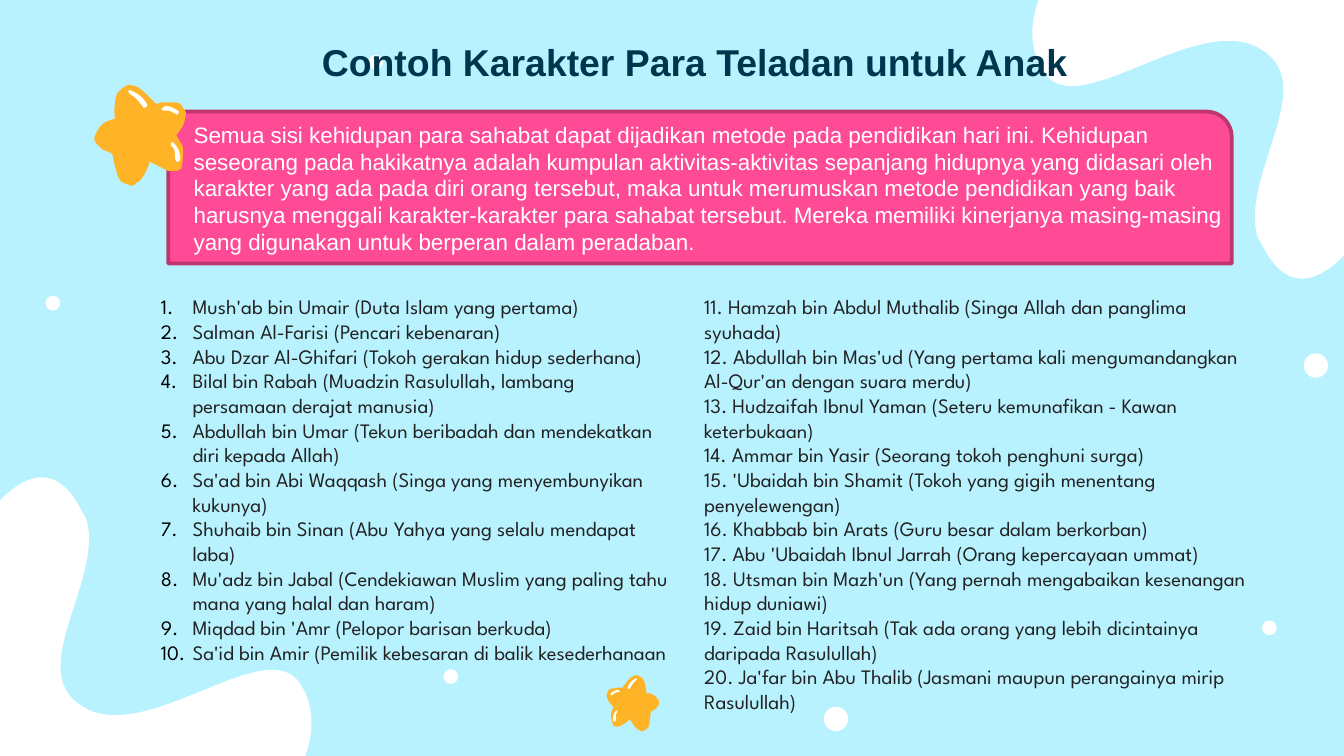
import math
from dataclasses import dataclass

from lxml import etree
from pptx import Presentation
from pptx import util as u
from pptx.dml.color import RGBColor
from pptx.enum import shapes, text
from pptx.oxml import ns


@dataclass(frozen=True)
class Theme:
    sky: str = "B8F2FF"
    white: str = "FFFFFF"
    pink: str = "FF4A95"
    pink_edge: str = "BD376E"
    star: str = "FFB428"
    navy: str = "00354E"
    ink: str = "222222"
    black: str = "000000"
    heading_font: str = "Arial"
    list_font: str = "League Spartan"
    title_size: int = 20
    intro_size: int = 12
    list_size: int = 11


THEME = Theme()
WIDTH, HEIGHT = 25.4, 14.29
UNIT = 0.0254

TITLE = "Contoh Karakter Para Teladan untuk Anak"
INTRO = (
    "Semua sisi kehidupan para sahabat dapat dijadikan metode pada pendidikan hari ini. "
    "Kehidupan seseorang pada hakikatnya adalah kumpulan aktivitas-aktivitas sepanjang "
    "hidupnya yang didasari oleh karakter yang ada pada diri orang tersebut, maka untuk "
    "merumuskan metode pendidikan yang baik harusnya menggali karakter-karakter para "
    "sahabat tersebut. Mereka memiliki kinerjanya masing-masing yang digunakan untuk "
    "berperan dalam peradaban."
)
FIRST_TEN = [
    "Mush'ab bin Umair (Duta Islam yang pertama)",
    "Salman Al-Farisi (Pencari kebenaran)",
    "Abu Dzar Al-Ghifari (Tokoh gerakan hidup sederhana)",
    "Bilal bin Rabah (Muadzin Rasulullah, lambang persamaan derajat manusia)",
    "Abdullah bin Umar (Tekun beribadah dan mendekatkan diri kepada Allah)",
    "Sa'ad bin Abi Waqqash (Singa yang menyembunyikan kukunya)",
    "Shuhaib bin Sinan (Abu Yahya yang selalu mendapat laba)",
    "Mu'adz bin Jabal (Cendekiawan Muslim yang paling tahu mana yang halal dan haram)",
    "Miqdad bin 'Amr (Pelopor barisan berkuda)",
    "Sa'id bin Amir (Pemilik kebesaran di balik kesederhanaan",
]
SECOND_TEN = [
    "11. Hamzah bin Abdul Muthalib (Singa Allah dan panglima syuhada)",
    "12. Abdullah bin Mas'ud (Yang pertama kali mengumandangkan Al-Qur'an dengan suara merdu)",
    "13. Hudzaifah Ibnul Yaman (Seteru kemunafikan - Kawan keterbukaan)",
    "14. Ammar bin Yasir (Seorang tokoh penghuni surga)",
    "15. 'Ubaidah bin Shamit (Tokoh yang gigih menentang penyelewengan)",
    "16. Khabbab bin Arats (Guru besar dalam berkorban)",
    "17. Abu 'Ubaidah Ibnul Jarrah (Orang kepercayaan ummat)",
    "18. Utsman bin Mazh'un (Yang pernah mengabaikan kesenangan hidup duniawi)",
    "19. Zaid bin Haritsah (Tak ada orang yang lebih dicintainya daripada Rasulullah)",
    "20. Ja'far bin Abu Thalib (Jasmani maupun perangainya mirip Rasulullah)",
]
DOTS = [(24.64, 6.68, 0.46), (23.85, 11.73, 0.28), (6.96, 1.04, 0.28),
        (0.86, 5.59, 0.28), (8.38, 12.65, 0.28), (15.57, 13.36, 0.46)]

BLOB_PIVOT = (500, 281.25)
BLOB = [
    (1091, -162),
    (1120, -79), (1100, 26), (1057, 104), (1038, 136), (978, 260), (939, 182),
    (938, 180), (937, 179), (936, 177), (924, 140), (964, 86), (953, 54),
    (950, 45), (943, 38), (931, 33), (881, 15), (797, 94), (775, 51),
    (773, 48), (772, 45), (771, 42), (756, -3), (806, -38), (792, -80),
    (789, -89), (783, -99), (773, -108), (746, -135), (693, -140), (685, -166),
    (680, -179), (687, -197), (714, -225), (766, -282), (887, -306), (958, -286),
    (1030, -265), (1072, -219), (1091, -162),
]
STAR_PIVOT = (104.5, 100.5)
STAR_BODY = [
    (96, 63), (103, 65), (113, 74), (116, 77), (120, 76), (125, 76), (131, 76), (134, 77),
    (136, 80), (138, 83), (138, 86), (136, 93), (132, 99), (131, 100), (133, 104), (136, 110),
    (135, 124), (133, 126), (131, 127), (129, 127), (126, 127), (123, 126), (111, 120),
    (111, 121), (108, 128), (104, 134), (101, 136), (100, 137), (98, 138), (95, 137),
    (92, 136), (88, 132), (84, 118), (83, 114), (76, 111), (74, 109), (72, 107), (70, 102),
    (76, 92), (85, 88), (85, 87), (85, 79), (86, 72), (87, 69), (89, 67), (90, 66), (93, 64),
    (95, 63),
]
STAR_GLINTS = [
    [(96, 67), (97, 67), (104, 71), (109, 77), (109, 79), (107, 80), (106, 79), (101, 73),
     (97, 70), (96, 69), (95, 68)],
    [(122, 79), (126, 79), (132, 82), (133, 83), (132, 85), (131, 85), (130, 84), (129, 84),
     (128, 83), (125, 82), (124, 82), (122, 82), (121, 82), (120, 81), (121, 80)],
    [(128, 106), (129, 106), (133, 112), (134, 118), (133, 120), (131, 120), (130, 117),
     (130, 115), (130, 113), (129, 110), (127, 108), (127, 106)],
]


def rgb(code):
    return RGBColor.from_string(code)


def paint(shape, fill, edge=None):
    shape.shadow.inherit = False
    shape.fill.solid()
    shape.fill.fore_color.rgb = rgb(fill)
    if edge:
        shape.line.color.rgb = rgb(edge)
        shape.line.width = u.Pt(2)
    else:
        shape.line.fill.background()


def smooth_loop(anchors):
    count = len(anchors)
    points = [anchors[0]]
    for index in range(count):
        before, here, after, beyond = (anchors[(index + k) % count] for k in (-1, 0, 1, 2))
        leave = tuple(h + (a - b) / 6 for b, h, a in zip(before, here, after))
        arrive = tuple(a - (y - h) / 6 for h, a, y in zip(here, after, beyond))
        points += [leave, arrive, after]
    return points


def bend(shape):
    segments = list(shape._element.iter(ns.qn("a:lnTo")))
    for first, second, end in zip(*[iter(segments)] * 3):
        curve = etree.Element(ns.qn("a:cubicBezTo"))
        first.addprevious(curve)
        for segment in (first, second, end):
            curve.append(segment[0])
            segment.getparent().remove(segment)


def add_outline(slide, points, fill, pivot, centre, scale=1, tilt=0, flip=1):
    cos, sin = math.cos(math.radians(tilt)), math.sin(math.radians(tilt))
    placed = []
    for x, y in points:
        dx, dy = (x - pivot[0]) * flip * scale * UNIT, (y - pivot[1]) * scale * UNIT
        placed.append((u.Cm(centre[0] + dx * cos - dy * sin),
                       u.Cm(centre[1] + dx * sin + dy * cos)))
    builder = slide.shapes.build_freeform(*placed[0])
    builder.add_line_segments(placed[1:], close=True)
    shape = builder.convert_to_shape()
    bend(shape)
    paint(shape, fill)


def add_backdrop(slide):
    slide.background.fill.solid()
    slide.background.fill.fore_color.rgb = rgb(THEME.sky)
    for left, top, size in DOTS:
        dot = slide.shapes.add_shape(shapes.MSO_SHAPE.OVAL, *map(u.Cm, (left, top, size, size)))
        paint(dot, THEME.white)
    for tilt in (0, 180):
        add_outline(slide, BLOB, THEME.white, BLOB_PIVOT, (WIDTH / 2, HEIGHT / 2), tilt=tilt)


def add_star(slide, centre, **pose):
    for fill, anchors in [(THEME.star, STAR_BODY)] + [(THEME.white, g) for g in STAR_GLINTS]:
        add_outline(slide, smooth_loop(anchors), fill, STAR_PIVOT, centre, **pose)


def add_text(slide, box, lines, font, size, color, bold=False):
    frame = slide.shapes.add_textbox(*map(u.Cm, box)).text_frame
    frame.word_wrap = True
    frame.text = "\n".join(lines)
    for paragraph in frame.paragraphs:
        for run in paragraph.runs:
            run.font.name, run.font.size, run.font.bold = font, u.Pt(size), bold
            run.font.color.rgb = rgb(color)
    return frame


def add_title(slide, box):
    frame = add_text(slide, box, [TITLE], THEME.heading_font, THEME.title_size, THEME.navy, True)
    frame.margin_top = u.Cm(0.26)
    frame.paragraphs[0].alignment = text.PP_ALIGN.CENTER


def add_intro_card(slide, box):
    card = slide.shapes.add_shape(shapes.MSO_SHAPE.ROUND_1_RECTANGLE, *map(u.Cm, box))
    paint(card, THEME.pink, THEME.pink_edge)
    left, top, width, height = box
    add_text(slide, (left + 0.23, top + 0.05, width - 0.05, height), [INTRO],
             THEME.heading_font, THEME.intro_size, THEME.white)


def add_companions(slide, box, names, numbered=False):
    frame = add_text(slide, box, names, THEME.list_font, THEME.list_size, THEME.ink)
    if not numbered:
        return
    for paragraph in frame.paragraphs:
        properties = paragraph._p.get_or_add_pPr()
        properties.set("marL", str(u.Cm(0.6)))
        properties.set("indent", str(-u.Cm(0.6)))
        color = etree.SubElement(properties, ns.qn("a:buClr"))
        etree.SubElement(color, ns.qn("a:srgbClr"), val=THEME.black)
        etree.SubElement(properties, ns.qn("a:buFont"), typeface=THEME.list_font)
        etree.SubElement(properties, ns.qn("a:buAutoNum"), type="arabicPeriod")


def main():
    presentation = Presentation()
    presentation.slide_width, presentation.slide_height = u.Cm(WIDTH), u.Cm(HEIGHT)
    slide = presentation.slides.add_slide(presentation.slide_layouts[6])
    add_backdrop(slide)
    add_intro_card(slide, (3.18, 2.11, 20.1, 2.87))
    add_title(slide, (1.59, 0.49, 23.09, 1.83))
    add_star(slide, (2.66, 2.56))
    add_star(slide, (11.97, 13.31), scale=0.56, tilt=-8, flip=-1)
    add_companions(slide, (2.79, 5.44, 10.16, 8.84), FIRST_TEN, numbered=True)
    add_companions(slide, (13.06, 5.44, 11.1, 8.26), SECOND_TEN)
    presentation.save("out.pptx")


if __name__ == "__main__":
    main()
